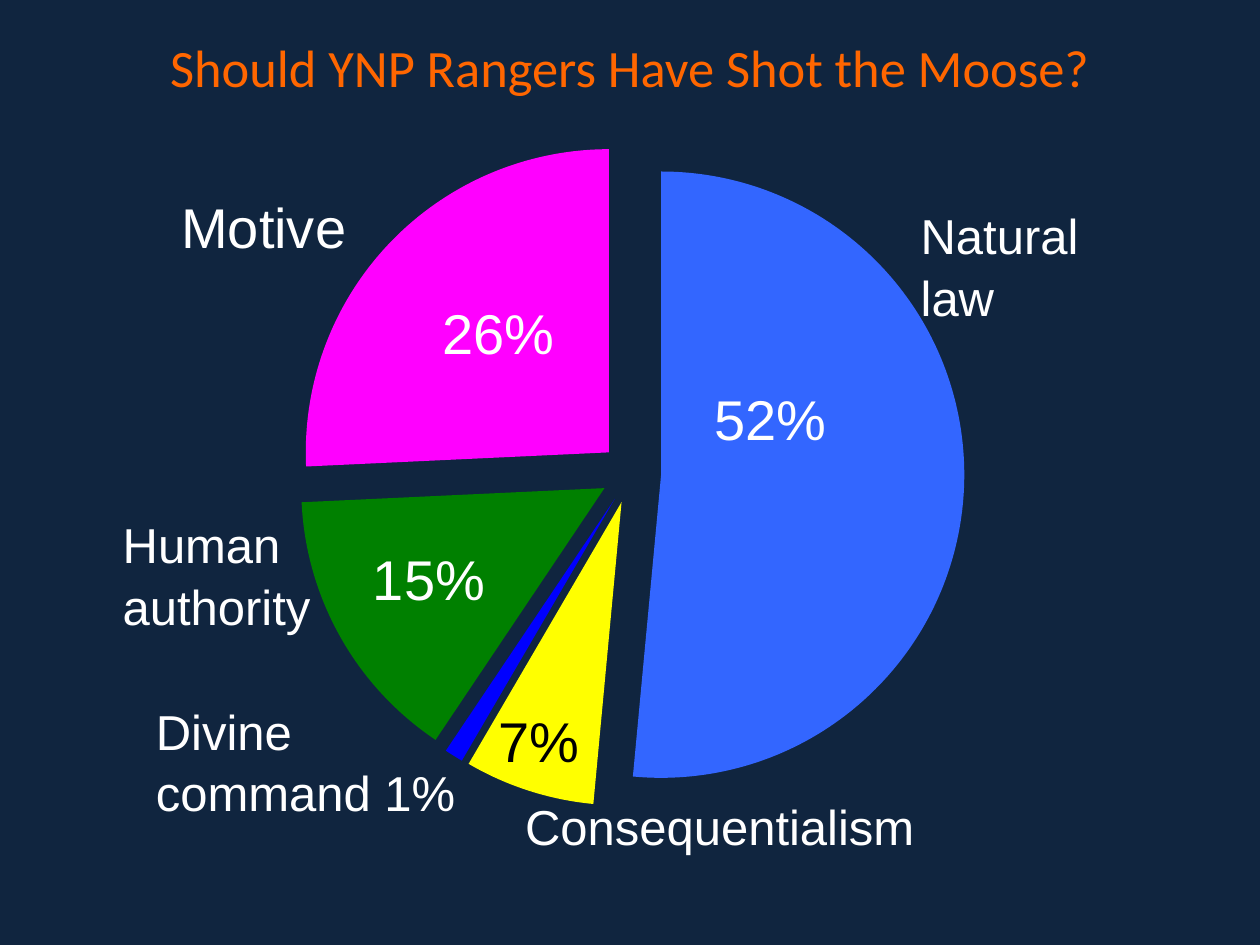
"""Build the moose survey slide: an exploded pie chart with labels."""
import pptx
import pptx.chart.data
import pptx.dml.color
import pptx.enum.chart
import pptx.enum.text
import pptx.util
from lxml import etree

Pt = pptx.util.Pt
RGB = pptx.dml.color.RGBColor
NAVY = RGB(0x10, 0x25, 0x3F)
ORANGE = RGB(0xFF, 0x66, 0x00)
WHITE = RGB(0xFF, 0xFF, 0xFF)
BLACK = RGB(0x00, 0x00, 0x00)

TITLE = "Should YNP Rangers Have Shot the Moose?"
SLICES = [
    (52, RGB(0x33, 0x66, 0xFF)),
    (7, RGB(0xFF, 0xFF, 0x00)),
    (1, RGB(0x00, 0x00, 0xFF)),
    (15, RGB(0x00, 0x80, 0x00)),
    (26, RGB(0xFF, 0x00, 0xFF)),
]
EXPLOSION = 10
LABELS = [
    ("Natural\nlaw", 519, 112.5, 106, 75, 28, WHITE),
    ("Consequentialism", 293, 450, 239, 41, 28, WHITE),
    ("Divine\ncommand 1%", 82, 395.5, 187, 75, 28, WHITE),
    ("26%", 245.5, 165, 79, 46, 32, WHITE),
    ("7%", 278, 398, 61, 46, 32, BLACK),
    ("15%", 206, 305.5, 79, 46, 32, WHITE),
    ("52%", 401, 214, 79, 46, 32, WHITE),
    ("Human\nauthority", 63, 289, 123, 75, 28, WHITE),
    ("Motive", 96.5, 104.5, 109, 46, 32, WHITE),
]


def add_text(s, text, x, y, w, h, size, color, font="Arial", spacing=1.05):
    tf = s.shapes.add_textbox(Pt(x), Pt(y), Pt(w), Pt(h)).text_frame
    tf.word_wrap = False
    tf.text = text
    for p in tf.paragraphs:
        p.line_spacing = spacing
        p.font.size = Pt(size)
        p.font.name = font
        p.font.color.rgb = color
    return tf


def add_pie(s):
    data = pptx.chart.data.CategoryChartData()
    data.categories = [str(i + 1) for i in range(len(SLICES))]
    data.add_series("Series 1", [value for value, _ in SLICES])
    chart = s.shapes.add_chart(
        pptx.enum.chart.XL_CHART_TYPE.PIE_EXPLODED,
        Pt(96), Pt(70), Pt(529), Pt(401), data).chart
    chart.has_title = False
    chart.has_legend = False
    chart.font.name = "Calibri"
    chart.font.size = Pt(18)
    chart.font.color.rgb = BLACK
    plot = chart.plots[0]
    plot.vary_by_categories = True
    series = plot.series[0]
    for i, (_, color) in enumerate(SLICES):
        fmt = series.points[i].format
        fmt.fill.solid()
        fmt.fill.fore_color.rgb = color
        fmt.line.fill.background()
    ns = "{http://schemas.openxmlformats.org/drawingml/2006/chart}"
    explosion = series._element.find(ns + "explosion")
    if explosion is None:
        explosion = etree.Element(ns + "explosion")
        series._element.find(ns + "dPt").addprevious(explosion)
    explosion.set("val", str(EXPLOSION))


def main():
    prs = pptx.Presentation()
    prs.slide_width, prs.slide_height = Pt(720), Pt(540)
    s = prs.slides.add_slide(prs.slide_layouts[6])
    s.background.fill.solid()
    s.background.fill.fore_color.rgb = NAVY
    add_pie(s)
    for label in LABELS:
        add_text(s, *label)
    tf = add_text(s, TITLE, 86, 16.5, 548, 42, 30, ORANGE, "Calibri", 1.0)
    tf.paragraphs[0].alignment = pptx.enum.text.PP_ALIGN.CENTER
    prs.save("out.pptx")


if __name__ == "__main__":
    main()
